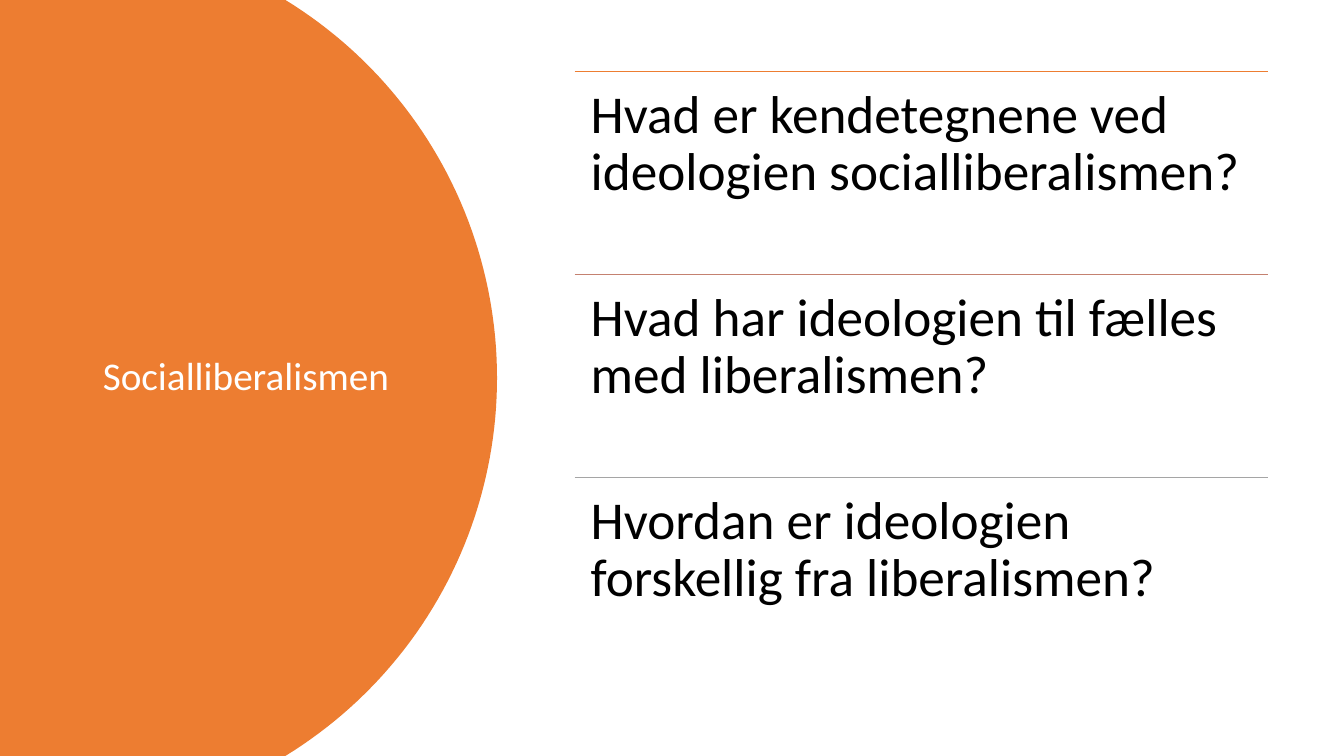
from math import asin, cos, sin
from lxml.etree import SubElement as Sub
from pptx import Presentation
from pptx.dml.color import RGBColor as Rgb
from pptx.enum.shapes import MSO_CONNECTOR as Link
from pptx.enum.text import MSO_ANCHOR as Anchor, MSO_AUTO_SIZE as Fit, PP_ALIGN as Align
from pptx.oxml.ns import qn
from pptx.util import Inches, Pt

ORANGE = Rgb(0xED, 0x7D, 0x31)
ROSE = Rgb(0xC4, 0x81, 0x70)
GRAY = Rgb(0xA5, 0xA5, 0xA5)
WHITE = Rgb(0xFF, 0xFF, 0xFF)
BLACK = Rgb(0, 0, 0)


class Page:
    """Style and current slide; lengths are percent of the slide's size."""

    font = "Calibri"

    def __init__(self, deck):
        self.wide, self.high = deck.slide_width, deck.slide_height
        self.slide = deck.slides.add_slide(deck.slide_layouts[5])
        self.shapes = self.slide.shapes

    def x(self, share):
        return round(self.wide * share / 100)

    def y(self, share):
        return round(self.high * share / 100)

    def style(self, frame, text, size, color, anchor, inset):
        frame.text = text
        frame.word_wrap = True
        frame.auto_size = Fit.NONE
        frame.vertical_anchor = anchor
        frame.margin_left = frame.margin_right = inset
        frame.margin_top = frame.margin_bottom = inset
        para = frame.paragraphs[0]
        para.alignment = Align.LEFT
        para.line_spacing = 0.9
        para.font.name = self.font
        para.font.size = Pt(size)
        para.font.color.rgb = color

    def disc(self, mid, radius, color, steps=90):
        """Circle centred at half height, cut off by the slide's edges."""
        mid, radius, half = self.x(mid), self.x(radius), self.high / 2
        turn = asin(half / radius)
        angles = [turn * (2 * i / steps - 1) for i in range(steps + 1)]
        rim = [(round(mid + radius * cos(a)), round(half + radius * sin(a)))
               for a in angles]
        pen = self.shapes.build_freeform(0, 0)
        pen.add_line_segments(rim + [(0, self.high)], close=True)
        shape = pen.convert_to_shape()
        shape.shadow.inherit = False
        shape.fill.solid()
        shape.fill.fore_color.rgb = color
        shape.line.fill.background()

    def title(self, text, left, top, width, height):
        head = self.shapes.title
        head.left, head.top = self.x(left), self.y(top)
        head.width, head.height = self.x(width), self.y(height)
        self.style(head.text_frame, text, 28, WHITE, Anchor.MIDDLE, Inches(0.1))
        # Bring the title in front of the disc
        head.element.getparent().append(head.element)

    def rule(self, left, top, width, color):
        line = self.shapes.add_connector(
            Link.STRAIGHT, self.x(left), self.y(top), self.x(left + width), self.y(top))
        line.line.color.rgb = color
        line.line.width = Pt(1)
        Sub(line.element.spPr, qn("a:effectLst"))

    def text(self, text, left, top, width, height):
        box = self.shapes.add_textbox(
            self.x(left), self.y(top), self.x(width), self.y(height))
        self.style(box.text_frame, text, 38, BLACK, Anchor.TOP, Inches(0.16))


def main():
    deck = Presentation()
    deck.slide_width, deck.slide_height = Inches(13.33), Inches(7.5)
    page = Page(deck)

    # Left panel
    page.disc(3.98, 33, ORANGE)
    page.title("Socialliberalismen", 6.9, 9.33, 24.2, 81.2)

    # Questions, each under its own rule
    left, top, width, row = 42.75, 9.43, 51.6, 26.85
    asks = [
        ("Hvad er kendetegnene ved ideologien socialliberalismen?", ORANGE),
        ("Hvad har ideologien til fælles med liberalismen?", ROSE),
        ("Hvordan er ideologien forskellig fra liberalismen?", GRAY),
    ]
    for i, (ask, color) in enumerate(asks):
        page.rule(left, top + i * row, width, color)
        page.text(ask, left, top + i * row, width, row)

    deck.save("out.pptx")


if __name__ == "__main__":
    main()
